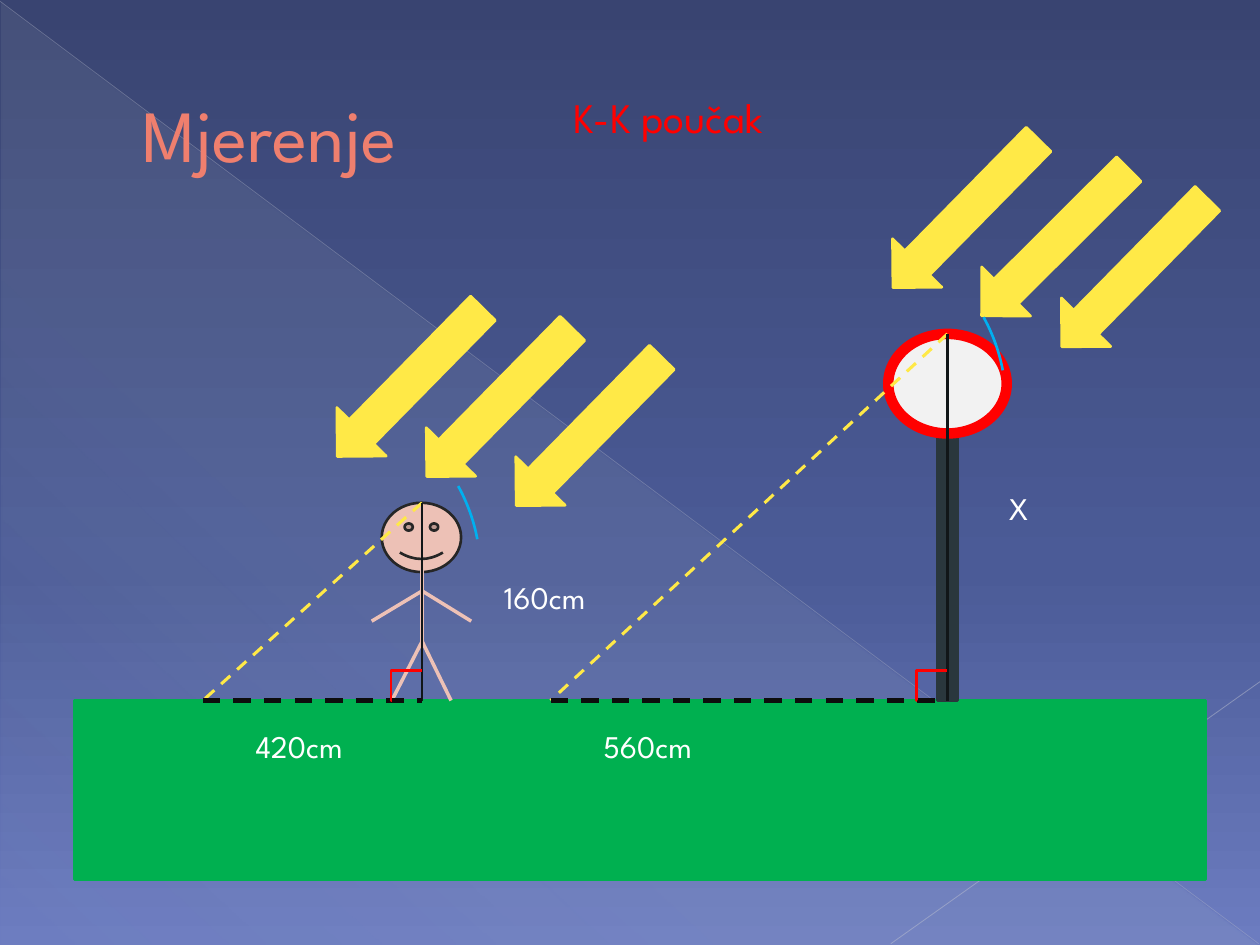
"""Build the slide showing a height measured with similar triangles."""
from lxml import etree
from pptx import Presentation
from pptx.dml.color import RGBColor
from pptx.enum.dml import MSO_LINE
from pptx.enum.shapes import MSO_CONNECTOR, MSO_SHAPE
from pptx.enum.text import MSO_ANCHOR
from pptx.oxml.ns import qn
from pptx.util import Inches, Pt

RECT, OVAL, ARC = MSO_SHAPE.RECTANGLE, MSO_SHAPE.OVAL, MSO_SHAPE.ARC
SMILEY, ARROW, TRIANGLE = MSO_SHAPE.SMILEY_FACE, MSO_SHAPE.LEFT_ARROW, MSO_SHAPE.RIGHT_TRIANGLE
STRAIGHT, ELBOW = MSO_CONNECTOR.STRAIGHT, MSO_CONNECTOR.ELBOW
DASH, TOP, MIDDLE = MSO_LINE.DASH, MSO_ANCHOR.TOP, MSO_ANCHOR.MIDDLE

FONT = "League Spartan"
SKIN, YELLOW, RED, GREEN, POST = "EDC1B6", "FFE947", "FF0000", "00B050", "2A373D"
WHITE, CORAL, BLUE, INK, DARK = "FFFFFF", "EF7F6E", "00B0F0", "111618", "0D0D0D"
GROUND_Y, PERSON_X, SIGN_X = 5.56, 3.35, 7.52
HEAD_Y, SIGN_Y = 3.99, 2.65

rgb = RGBColor.from_string


def add_shape(kind, box, fill=None, line=None, width=1.5, rotation=0):
    sp = s.shapes.add_shape(kind, *map(Inches, box))
    sp.shadow.inherit = False
    sp.rotation = rotation
    if fill:
        sp.fill.solid()
        sp.fill.fore_color.rgb = rgb(fill)
    else:
        sp.fill.background()
    if line:
        sp.line.color.rgb = rgb(line)
        sp.line.width = Pt(width)
    else:
        sp.line.fill.background()
    return sp


def add_line(start, end, color, width, dash=None, kind=STRAIGHT):
    cx = s.shapes.add_connector(kind, *map(Inches, start + end))
    cx.line.color.rgb = rgb(color)
    cx.line.width = Pt(width)
    if dash:
        cx.line.dash_style = dash
    etree.SubElement(cx._element.spPr, qn("a:effectLst"))
    return cx


prs = Presentation()
prs.slide_width, prs.slide_height = Inches(10), Inches(7.5)
s = prs.slides.add_slide(prs.slide_layouts[6])

s.background.fill.solid()
wedge = add_shape(TRIANGLE, (0.01, 0.02, 9.98, 7.48), "C5D1D7")
gradients = [
    (s._element.find(".//" + qn("p:bgPr")), 90,
     [(0, "394471", 100), (60, "4B5B97", 100), (100, "6C7CC0", 100)]),
    (wedge._element.spPr, 133,
     [(0, "C5D1D7", 10), (70, "C5D1D7", 8), (100, "C5D1D7", 1)]),
]
for parent, angle, stops in gradients:
    grad = etree.Element(qn("a:gradFill"), rotWithShape="1")
    gs_list = etree.SubElement(grad, qn("a:gsLst"))
    for pos, color, alpha in stops:
        gs = etree.SubElement(gs_list, qn("a:gs"), pos=str(pos * 1000))
        clr = etree.SubElement(gs, qn("a:srgbClr"), val=color)
        etree.SubElement(clr, qn("a:alpha"), val=str(alpha * 1000))
    etree.SubElement(grad, qn("a:lin"), ang=str(angle * 60000), scaled="0")
    parent.replace(parent.find(qn("a:solidFill")), grad)

for start, end, color, width, alpha in [
    ((0, 0.01), (9.99, 7.49), "BABECD", 0.39, 35),
    ((10, 5.41), (7.07, 7.49), "C2C5D2", 0.47, 45),
]:
    cx = add_line(start, end, color, width)
    clr = cx._element.find(".//" + qn("a:srgbClr"))
    etree.SubElement(clr, qn("a:alpha"), val=str(alpha * 1000))

add_shape(RECT, (0.59, GROUND_Y, 8.98, 1.42), GREEN, GREEN)
post = add_shape(RECT, (7.44, 3.2, 0.16, 2.36), POST, POST)
sign = add_shape(OVAL, (7.05, SIGN_Y, 0.94, 0.79), "F2F2F2", RED, 6)

for joint_y, end_x, end_y in [
    (5.09, 3.11, GROUND_Y), (5.09, 3.58, GROUND_Y), (4.69, 2.95, 4.93), (4.69, 3.74, 4.93),
]:
    add_line((PERSON_X, joint_y), (end_x, end_y), SKIN, 2)
add_shape(SMILEY, (3.03, HEAD_Y, 0.63, 0.55), SKIN, "262626")
add_line((PERSON_X, 4.46), (PERSON_X, 5.09), SKIN, 2)

for left, top, rotation in [
    (7.55, 1.65, 315.1), (8.18, 1.89, 314.5), (6.84, 1.42, 314.5),
    (3.14, 2.92, 314.5), (3.85, 3.15, 314.5), (2.43, 2.76, 314.5),
]:
    add_shape(ARROW, (left, top, 1.65, 0.55), YELLOW, YELLOW, rotation=rotation)

for x, top_y, shadow_x, on_post in [
    (PERSON_X, HEAD_Y, 1.61, False), (SIGN_X, SIGN_Y, 4.37, True),
]:
    top, foot, tip = (x, top_y), (x, GROUND_Y), (shadow_x, GROUND_Y)
    ray = add_line(top, tip, YELLOW, 1.75, DASH)
    height = add_line(top, foot, INK, 1.5)
    shadow = add_line(tip, foot, DARK, 2.5, DASH)
    if on_post:
        ray.begin_connect(sign, 0)
        height.begin_connect(sign, 0)
        height.end_connect(post, 2)
        shadow.end_connect(post, 2)

for x in (PERSON_X, SIGN_X):
    corner = add_line((x - 0.24, GROUND_Y), (x, GROUND_Y - 0.24), RED, 1.5, kind=ELBOW)
    av = corner._element.find(".//" + qn("a:avLst"))
    etree.SubElement(av, qn("a:gd"), name="adj1", fmla="val -2900")

for left, top in [(6.66, 1.95), (2.49, 3.29)]:
    arc = add_shape(ARC, (left, top, 1.26, 1.89), line=BLUE, rotation=156.9)
    for i, degrees in enumerate((166.91, 206.93)):
        arc.adjustments[i] = degrees * 0.6

for text, box, size, color, anchor, indent in [
    ("Mjerenje", (0.5, 0.29, 9, 1.53), 42, CORAL, MIDDLE, 0.53),
    ("X", (7.91, 3.83, 0.31, 0.4), 18, WHITE, TOP, 0),
    ("420cm", (1.93, 5.72, 1.02, 0.4), 18, WHITE, TOP, 0),
    ("560cm", (4.69, 5.72, 1.18, 0.4), 18, WHITE, TOP, 0),
    ("160cm", (3.9, 4.54, 1.1, 0.4), 18, WHITE, TOP, 0),
    ("K-K poučak", (4.45, 0.68, 1.8, 0.91), 24, RED, TOP, 0),
]:
    tf = s.shapes.add_textbox(*map(Inches, box)).text_frame
    tf.word_wrap = True
    tf.vertical_anchor = anchor
    p = tf.paragraphs[0]
    if indent:
        p._p.get_or_add_pPr().set("marL", str(Inches(indent)))
    r = p.add_run()
    r.text = text
    for name, value in {"name": FONT, "size": Pt(size)}.items():
        setattr(r.font, name, value)
    r.font.color.rgb = rgb(color)

prs.save("out.pptx")
